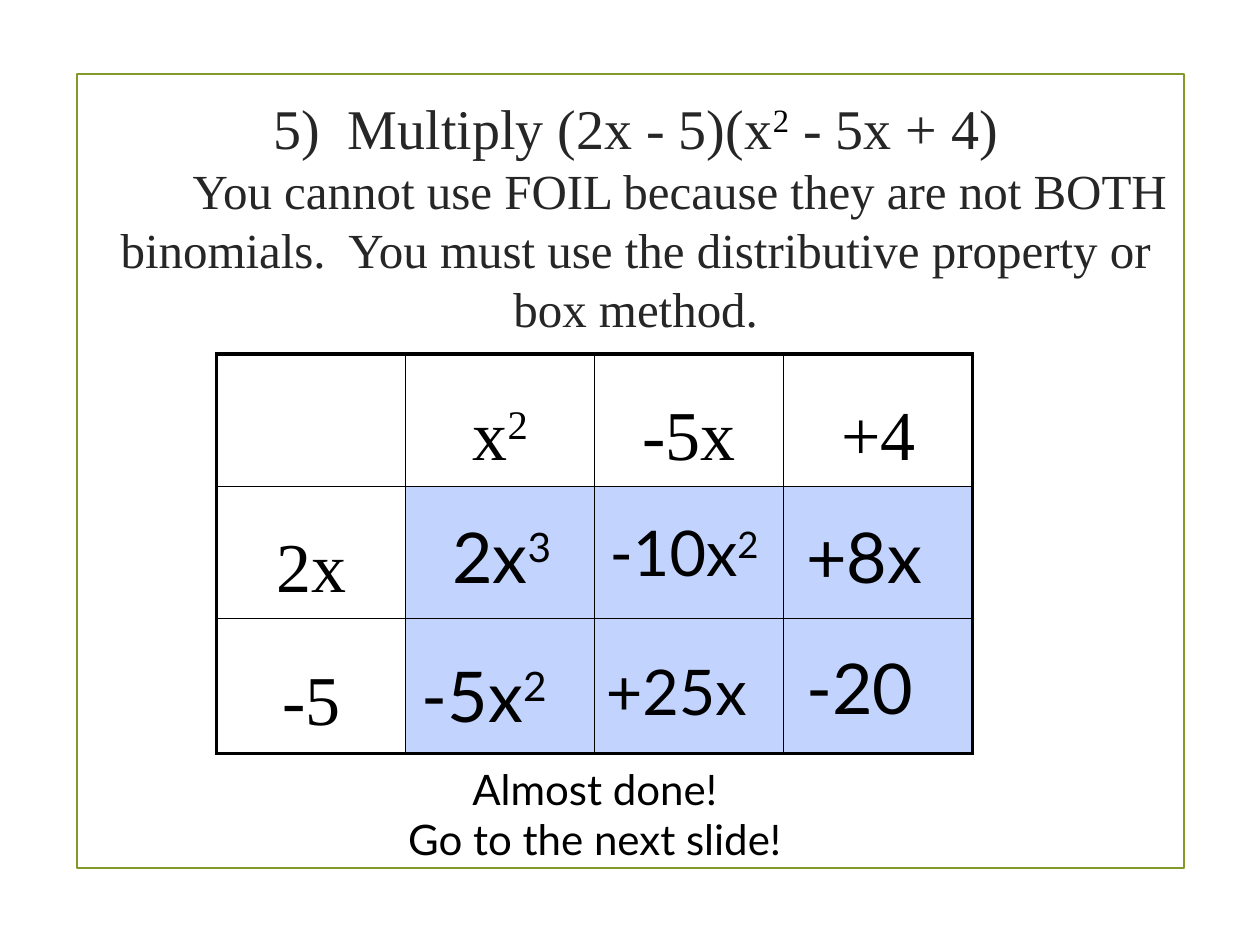
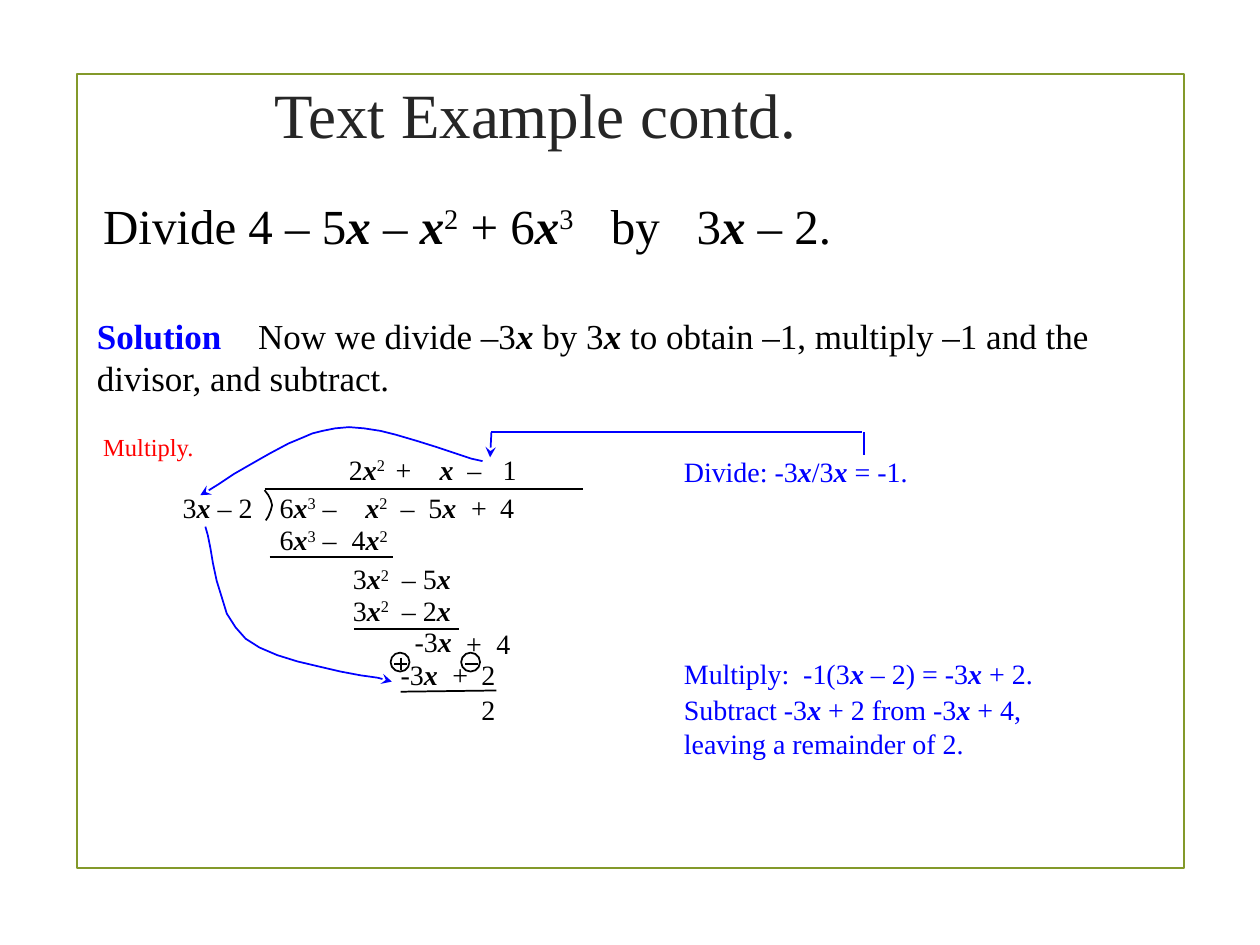
from collections import namedtuple
from dataclasses import dataclass

from lxml import etree
from pptx import Presentation
from pptx.dml.color import RGBColor
from pptx.enum.shapes import MSO_CONNECTOR, MSO_SHAPE
from pptx.enum.text import MSO_ANCHOR, MSO_AUTO_SIZE, PP_ALIGN
from pptx.oxml.ns import qn
from pptx.util import Inches, Pt

STRAIGHT = MSO_CONNECTOR.STRAIGHT
RECTANGLE, OVAL = MSO_SHAPE.RECTANGLE, MSO_SHAPE.OVAL
LEFT, CENTER = PP_ALIGN.LEFT, PP_ALIGN.CENTER
MIDDLE = MSO_ANCHOR.MIDDLE
NO_AUTOFIT = MSO_AUTO_SIZE.NONE
TITLE_ONLY = 5

Box = namedtuple("Box", "left top width height")


@dataclass(frozen=True)
class Theme:
    """Colours, fonts and type sizes shared by the slides."""
    ink: str = "000000"
    title: str = "262626"
    frame: str = "83992A"
    product: str = "C2D3FE"
    blue: str = "0000FF"
    red: str = "FF0000"
    serif: str = "Times New Roman"
    sans: str = "Lato"
    huge: int = 40
    large: int = 36
    heading: int = 32
    prompt: int = 28
    closing: int = 24
    body: int = 20
    work: int = 16
    label: int = 14
    thin: float = 1
    frame_line: float = 1.25
    thick: float = 2.25


THEME = Theme()


def rgb(color):
    """Turn a hex string into a colour."""
    return RGBColor.from_string(color)


def inside(box, left, top, width, height):
    """Return a box given by offsets from the corner of another box."""
    return Box(box.left + left, box.top + top, width, height)


def write(paragraph, text, size, color=THEME.ink, font=THEME.serif, align=LEFT, tabs=()):
    """Fill a paragraph; *...* marks bold italic and ^...^ marks superscript."""
    paragraph.alignment = align
    if tabs:
        tab_list = etree.SubElement(paragraph._p.get_or_add_pPr(), qn("a:tabLst"))
        for position in tabs:
            etree.SubElement(tab_list, qn("a:tab"), pos=str(Inches(position)), algn="l")
    for i, chunk in enumerate(text.split("*")):
        for j, piece in enumerate(chunk.split("^")):
            if not piece:
                continue
            run = paragraph.add_run()
            run.text = piece
            run.font.name, run.font.size = font, Pt(size)
            run.font.color.rgb = rgb(color)
            run.font.bold = run.font.italic = i % 2 == 1
            if j % 2:
                run.font._element.set("baseline", "30000")


def add_text(slide, box, text, size, inset=True, **style):
    """Add a wrapping text box with one paragraph per line and return its frame."""
    frame = slide.shapes.add_textbox(*map(Inches, box)).text_frame
    frame.word_wrap = True
    if not inset:
        frame.margin_left = frame.margin_right = frame.margin_top = frame.margin_bottom = 0
    for i, line in enumerate(text.split("\n")):
        write(frame.add_paragraph() if i else frame.paragraphs[0], line, size, **style)
    return frame


def set_line(shape, color, width=THEME.thin, arrow=False):
    """Set the outline and an optional arrowhead at its end."""
    shape.line.color.rgb = rgb(color)
    shape.line.width = Pt(width)
    if arrow:
        etree.SubElement(shape.line._get_or_add_ln(), qn("a:tailEnd"), type="stealth")


def add_line(slide, box, x1, y1, x2, y2, color=THEME.ink, arrow=False):
    """Draw a straight line between two offsets in a box."""
    line = slide.shapes.add_connector(
        STRAIGHT, Inches(box.left + x1), Inches(box.top + y1),
        Inches(box.left + x2), Inches(box.top + y2))
    set_line(line, color, arrow=arrow)
    etree.SubElement(line._element.spPr, qn("a:effectLst"))


def add_curve(slide, box, points, color=THEME.ink, arrow=False):
    """Draw an open outline through offsets in a box."""
    start, *rest = [(Inches(box.left + x), Inches(box.top + y)) for x, y in points]
    builder = slide.shapes.build_freeform(*start)
    builder.add_line_segments(rest, close=False)
    curve = builder.convert_to_shape()
    curve.fill.background()
    curve.shadow.inherit = False
    set_line(curve, color, arrow=arrow)


def add_outline(slide, kind, box, color, width=THEME.thin):
    """Add an unfilled preset shape."""
    shape = slide.shapes.add_shape(kind, *map(Inches, box))
    shape.fill.background()
    shape.shadow.inherit = False
    set_line(shape, color, width)


def new_slide(prs, title_box, title_lines):
    """Add a framed slide with a centred title made of text and size pairs."""
    slide = prs.slides.add_slide(prs.slide_layouts[TITLE_ONLY])
    add_outline(slide, RECTANGLE, Box(0.61, 0.59, 8.79, 6.3), THEME.frame, THEME.frame_line)
    title = slide.shapes.title
    title.left, title.top, title.width, title.height = map(Inches, title_box)
    frame = title.text_frame
    frame.auto_size = NO_AUTOFIT
    frame.word_wrap = True
    frame.vertical_anchor = MIDDLE
    for i, (text, size) in enumerate(title_lines):
        paragraph = frame.add_paragraph() if i else frame.paragraphs[0]
        write(paragraph, text, size, THEME.title, align=CENTER)
        paragraph.space_before = Pt(0)
    return slide


def set_borders(cell, widths):
    """Draw the left, right, top and bottom borders of a cell."""
    properties = cell._tc.get_or_add_tcPr()
    for side, width in zip("LRTB", widths):
        border = etree.SubElement(properties, qn(f"a:ln{side}"), w=str(Pt(width)))
        fill = etree.SubElement(border, qn("a:solidFill"))
        etree.SubElement(fill, qn("a:srgbClr"), val=THEME.ink)


def add_box_grid(slide, box):
    """Draw the box-method grid with factors on its top and left edges."""
    factors = [["", "x^2^", "-5x", "+4"], ["2x", "", "", ""], ["-5", "", "", ""]]
    table = slide.shapes.add_table(3, 4, *map(Inches, box)).table
    table.first_row = table.horz_banding = False
    for column in table.columns:
        column.width = Inches(box.width / 4)
    for row, height in zip(table.rows, (1.05, 1.05, 1.07)):
        row.height = Inches(height)
    for r, row in enumerate(factors):
        for c, factor in enumerate(row):
            cell = table.cell(r, c)
            outer_edges = (c == 0, c == 3, r == 0, r == 2)
            set_borders(cell, [THEME.thick if edge else THEME.thin for edge in outer_edges])
            if r and c:
                cell.fill.solid()
                cell.fill.fore_color.rgb = rgb(THEME.product)
            else:
                cell.fill.background()
            if factor:
                cell.margin_top = Inches(0.35)
                write(cell.text_frame.paragraphs[0], factor, THEME.huge, align=CENTER)


def add_products(slide, box):
    """Place the partial products over the shaded cells of the grid."""
    products = [
        ("2x^3^", 1.77, 1.22, 1, THEME.huge),
        ("-5x^2^", 1.53, 2.32, 1.22, THEME.huge),
        ("-10x^2^", 3.02, 1.22, 1.44, THEME.large),
        ("+25x", 2.99, 2.32, 1.42, THEME.large),
        ("+8x", 4.58, 1.22, 1.22, THEME.huge),
        ("-20", 4.58, 2.26, 1.06, THEME.huge),
    ]
    for product, left, top, width, size in products:
        add_text(slide, inside(box, left, top, width, 0.77), product, size, font=THEME.sans)


def build_box_method(prs):
    """Build the slide that multiplies with the box method."""
    slide = new_slide(prs, Box(0.67, 1, 8.75, 1.42), [
        ("5)  Multiply (2x - 5)(x^2^ - 5x + 4)", THEME.heading),
        ("You cannot use FOIL because they are not BOTH binomials.  "
         "You must use the distributive property or box method.", THEME.prompt)])
    question, advice = slide.shapes.title.text_frame.paragraphs
    question.runs[1].font.color.rgb = rgb(THEME.ink)
    advice._p.get_or_add_pPr().set("indent", str(Inches(0.7)))
    grid = Box(1.72, 2.81, 6, 3.17)
    add_box_grid(slide, grid)
    add_products(slide, grid)
    add_text(slide, Box(0.46, 6.01, 8.52, 0.91), "Almost done!\nGo to the next slide!",
             THEME.closing, font=THEME.sans, align=CENTER)


def add_problem(slide, box):
    """Write the division problem and the explanation of this step."""
    add_text(slide, inside(box, 0.05, 0, 6.42, 0.57),
             "Divide 4 – 5*x* – *x*^2^ + 6*x*^3^\tby\t3*x* – 2.",
             THEME.prompt, tabs=(4.03, 4.71))
    solution = add_text(slide, inside(box, 0, 0.95, box.width, 0.78),
                        "*Solution*\tNow we divide –3*x* by 3*x* to obtain –1, "
                        "multiply –1 and the divisor, and subtract.",
                        THEME.body, tabs=(1.28,))
    lead = solution.paragraphs[0].runs[0].font
    lead.italic = False
    lead.color.rgb = rgb(THEME.blue)


def add_long_division(slide, box):
    """Lay out the rows, rules and sign changes of the long division."""
    rows = [
        ("2*x*^2^\t+\t*x*\t–\t1", 1.32, 0, 1.54, (0.37, 0.72, 0.94, 1.22)),
        ("3*x* – 2", 0, 0.3, 0.62, ()),
        ("6*x*^3^ –\t*x*^2^\t–\t5*x*\t+\t4", 0.77, 0.3, 2.03, (0.68, 0.96, 1.18, 1.52, 1.75)),
        ("6*x*^3^ –\t4*x*^2^", 0.77, 0.56, 1.02, (0.57,)),
        ("3*x*^2^\t– 5*x*", 1.35, 0.87, 1.02, (0.39,)),
        ("3*x*^2^\t– 2*x*", 1.35, 1.12, 1.02, (0.39,)),
        ("-3*x*", 1.84, 1.37, 0.49, ()),
        ("+\t4", 2.25, 1.38, 0.42, (0.24,)),
        ("-3*x*\t+\t2", 1.73, 1.63, 0.95, (0.41, 0.64)),
        ("2", 2.37, 1.91, 0.25, ()),
    ]
    for terms, left, top, width, tabs in rows:
        add_text(slide, inside(box, left, top, width, 0.27), terms, THEME.work,
                 inset=False, tabs=tabs)
    rules = [(0.65, 0.29, 3.18, 0.29), (0.69, 0.83, 1.67, 0.83),
             (1.36, 1.4, 2.19, 1.4), (1.73, 1.9, 2.49, 1.89)]
    for rule in rules:
        add_line(slide, box, *rule)
    add_curve(slide, box, [(0.65, 0.3), (0.68, 0.34), (0.7, 0.38), (0.71, 0.42),
                           (0.7, 0.46), (0.68, 0.51), (0.66, 0.54)])
    for sign_left in (1.65, 2.21):
        add_outline(slide, OVAL, inside(box, sign_left, 1.59, 0.15, 0.15), THEME.ink)
        add_line(slide, box, sign_left + 0.03, 1.68, sign_left + 0.13, 1.68)
    add_line(slide, box, 1.73, 1.63, 1.73, 1.73)


def add_step_arrows(slide, box):
    """Draw the divide and multiply arrows around the long division."""
    add_line(slide, box, 5.41, 0.02, 5.41, -0.16, THEME.blue)
    add_line(slide, box, 5.39, -0.16, 2.45, -0.16, THEME.blue)
    add_line(slide, box, 2.45, -0.16, 2.44, 0.04, THEME.blue, arrow=True)
    to_divisor = [(2.38, 0.07), (2.29, 0.05), (2.17, 0.01), (2.02, -0.04), (1.86, -0.09),
                  (1.69, -0.14), (1.57, -0.17), (1.44, -0.19), (1.32, -0.2), (1.21, -0.19),
                  (1.11, -0.17), (1.03, -0.15), (0.96, -0.12), (0.84, -0.07), (0.69, 0.01),
                  (0.55, 0.09), (0.41, 0.17), (0.29, 0.25), (0.21, 0.3), (0.14, 0.34)]
    to_product = [(0.18, 0.59), (0.2, 0.66), (0.22, 0.76), (0.24, 0.88), (0.27, 1.02),
                  (0.31, 1.15), (0.35, 1.28), (0.42, 1.39), (0.5, 1.48), (0.61, 1.55),
                  (0.75, 1.61), (0.91, 1.66), (1.08, 1.7), (1.25, 1.74), (1.41, 1.77),
                  (1.55, 1.79), (1.66, 1.82)]
    for points in (to_divisor, to_product):
        add_curve(slide, box, points, THEME.blue, arrow=True)
    add_text(slide, inside(box, -0.73, -0.21, 0.98, 0.33), "Multiply.", THEME.label,
             color=THEME.red)


def add_step_notes(slide, box):
    """Write the blue notes beside the long division."""
    notes = [
        ("Divide: -3*x*/3*x* = -1.", 0, 2.3, 0.37),
        ("Multiply:  -1(3*x* – 2) = -3*x* + 2.", 1.6, 3.55, 0.37),
        ("Subtract -3*x* + 2 from -3*x* + 4, leaving a remainder of 2.", 1.89, 3.21, 0.64),
    ]
    for note, top, width, height in notes:
        add_text(slide, inside(box, 0, top, width, height), note, THEME.work, color=THEME.blue)


def build_long_division(prs):
    """Build the slide that finishes the polynomial long division."""
    slide = new_slide(prs, Box(0, 0.58, 8.5, 0.64), [("Text Example contd.", THEME.large)])
    work = Box(1.45, 3.59, 3.18, 2.18)
    add_problem(slide, Box(0.67, 1.5, 8.65, 1.73))
    add_long_division(slide, work)
    add_step_arrows(slide, work)
    add_step_notes(slide, Box(5.33, 3.56, 3.55, 2.53))


def main():
    """Build both slides and save the presentation."""
    prs = Presentation()
    prs.slide_width, prs.slide_height = Inches(10), Inches(7.5)
    build_box_method(prs)
    build_long_division(prs)
    prs.save("out.pptx")


if __name__ == "__main__":
    main()
